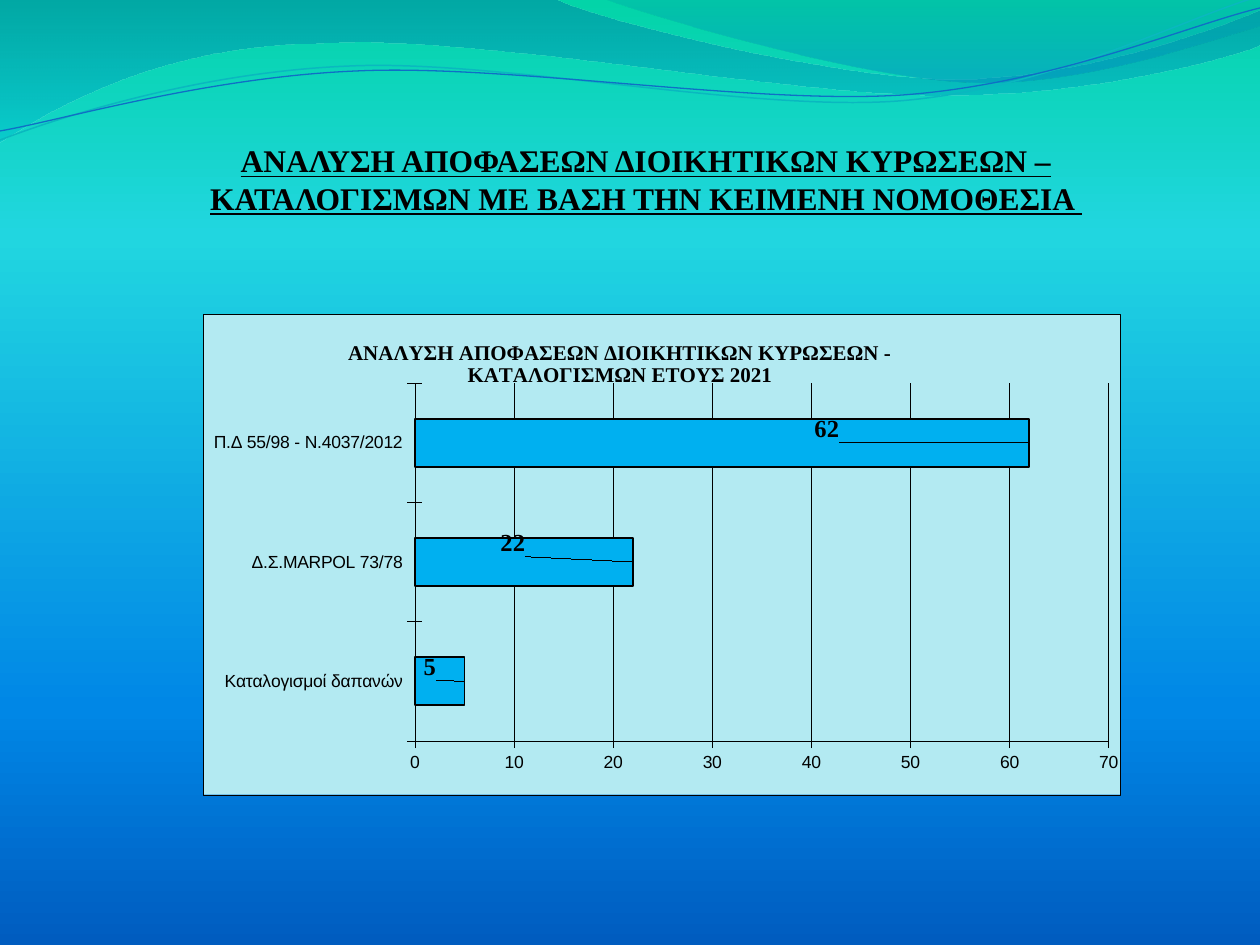
from lxml import etree
from pptx import Presentation
from pptx.chart.data import CategoryChartData
from pptx.dml.color import RGBColor
from pptx.enum.chart import XL_CHART_TYPE, XL_LABEL_POSITION, XL_TICK_LABEL_POSITION, XL_TICK_MARK
from pptx.enum.text import MSO_ANCHOR, PP_ALIGN
from pptx.oxml import parse_xml
from pptx.oxml.ns import nsdecls, qn
from pptx.util import Emu, Pt

BAR = XL_CHART_TYPE.BAR_CLUSTERED
OUTSIDE_END = XL_LABEL_POSITION.OUTSIDE_END
LOW = XL_TICK_LABEL_POSITION.LOW
CROSS = XL_TICK_MARK.CROSS
BOTTOM = MSO_ANCHOR.BOTTOM
CENTER = PP_ALIGN.CENTER

SCALE = 914400 / 126
SERIF, SANS = "Times New Roman", "Arial"
BLACK = "000000"


def px(length):
    return Emu(round(length * SCALE))


def color(hex_string):
    return RGBColor.from_string(hex_string)


def set_line(line, hex_string, points):
    line.color.rgb = color(hex_string)
    line.width = Pt(points)


def set_font(font, size, name, bold=False):
    font.size, font.name, font.bold = Pt(size), name, bold
    font.color.rgb = color(BLACK)


def set_gradient(fill, owner, stops):
    """Vertical gradient; each stop is (position %, colour, opacity %)."""
    fill.gradient()
    fill.gradient_angle = 270
    stop_list = next(owner.iter(qn("a:gsLst")))
    for stop in list(stop_list):
        stop_list.remove(stop)
    for position, hex_string, opacity in stops:
        stop = etree.SubElement(stop_list, qn("a:gs"), pos=str(position * 1000))
        tint = etree.SubElement(stop, qn("a:srgbClr"), val=hex_string)
        if opacity < 100:
            etree.SubElement(tint, qn("a:alpha"), val=str(opacity * 1000))


def manual_layout(x, y, w=None, h=None):
    """Chart layout in fractions: an offset, or a fixed inner area with w and h."""
    parts = []
    if w is not None:
        parts += [("layoutTarget", "inner"), ("xMode", "edge"), ("yMode", "edge")]
    parts += [("x", x), ("y", y)]
    if w is not None:
        parts += [("w", w), ("h", h)]
    inner = "".join(f'<c:{tag} val="{value}"/>' for tag, value in parts)
    return parse_xml(f'<c:layout {nsdecls("c")}><c:manualLayout>{inner}'
                     '</c:manualLayout></c:layout>')


def replace_layout(parent, layout, index):
    for old in parent.findall(qn("c:layout")):
        parent.remove(old)
    parent.insert(index, layout)


class Deck:
    def __init__(self, width, height):
        self.prs = Presentation()
        self.prs.slide_width, self.prs.slide_height = px(width), px(height)
        self.slide = self.prs.slides.add_slide(self.prs.slide_layouts[6])

    def background(self, stops):
        set_gradient(self.slide.background.fill, self.slide.element, stops)

    def wave(self, start, segments, stops=None, line=None):
        """Outline of segments: one point is a straight line, three a curve."""
        builder = self.slide.shapes.build_freeform(*start, scale=SCALE)
        points = [point for segment in segments for point in segment]
        builder.add_line_segments(points, close=stops is not None)
        shape = builder.convert_to_shape()
        shape.shadow.inherit = False
        steps = iter(list(shape.element.iter(qn("a:lnTo"))))
        for segment in segments:
            group = [next(steps) for _ in segment]
            if len(group) == 3:
                curve = etree.Element(qn("a:cubicBezTo"))
                group[0].addprevious(curve)
                for step in group:
                    curve.append(step[0])
                    step.getparent().remove(step)
        if stops:
            set_gradient(shape.fill, shape.element, stops)
            shape.line.fill.background()
        else:
            shape.fill.background()
            set_line(shape.line, *line)

    def heading(self, text, left, top, width, height):
        frame = self.slide.shapes.add_textbox(*map(px, (left, top, width, height))).text_frame
        frame.word_wrap = True
        frame.vertical_anchor = BOTTOM
        frame.margin_left = frame.margin_right = frame.margin_bottom = 0
        paragraph = frame.paragraphs[0]
        paragraph.alignment = CENTER
        run = paragraph.add_run()
        run.text = text
        set_font(run.font, 18, SERIF, True)
        run.font.underline = True

    def bar_chart(self, title, counts, label_offsets, left, top, width, height):
        data = CategoryChartData()
        data.categories = list(counts)
        data.add_series("Series 1", list(counts.values()))
        chart = self.slide.shapes.add_chart(
            BAR, *map(px, (left, top, width, height)), data).chart
        set_font(chart.font, 10, SANS)
        chart.has_legend = False

        # Panel and plot area
        space = chart.element
        space.find(qn("c:txPr")).addprevious(parse_xml(
            f'<c:spPr {nsdecls("c", "a")}><a:solidFill><a:srgbClr val="B3EAF2"/></a:solidFill>'
            f'<a:ln w="3175"><a:solidFill><a:srgbClr val="{BLACK}"/></a:solidFill></a:ln></c:spPr>'))
        replace_layout(next(space.iter(qn("c:plotArea"))),
                       manual_layout(0.231, 0.144, 0.757, 0.744), 0)

        # Chart title
        chart.has_title = True
        run = chart.chart_title.text_frame.paragraphs[0].add_run()
        run.text = title
        set_font(run.font, 12, SERIF, True)
        title_layout = manual_layout(0.154, 0.045)
        for tag in ("yMode", "xMode"):
            mode = etree.Element(qn(f"c:{tag}"), val="edge")
            title_layout[0].insert(0, mode)
        replace_layout(next(space.iter(qn("c:title"))), title_layout, 1)

        # Axes
        values = chart.value_axis
        for axis in (chart.category_axis, values):
            axis.major_tick_mark = CROSS
            set_font(axis.tick_labels.font, 10, SANS)
            set_line(axis.format.line, BLACK, 0.25)
        chart.category_axis.tick_label_position = LOW
        values.minimum_scale, values.maximum_scale, values.major_unit = 0, 70, 10
        set_line(values.major_gridlines.format.line, BLACK, 0.25)

        # Bars and their labels
        plot = chart.plots[0]
        plot.vary_by_categories = False
        plot.gap_width = 150
        bars = plot.series[0]
        bars.format.fill.solid()
        bars.format.fill.fore_color.rgb = color("00B0F0")
        set_line(bars.format.line, BLACK, 1)
        for index in range(len(counts)):
            label = bars.points[index].data_label
            set_font(label.font, 14, SERIF, True)
            label.position = OUTSIDE_END
        for element, offset in zip(space.iter(qn("c:dLbl")), label_offsets):
            replace_layout(element, manual_layout(*offset), 1)


def main():
    deck = Deck(1260, 945)
    deck.background([(0, "03D4A8", 100), (25, "21D6E0", 100),
                     (75, "0087E6", 100), (100, "005CBF", 100)])

    # Waves along the top
    deck.wave((0, -1), [
        [(554, -1)],
        [(600, 21), (837, 79), (955, 79)],
        [(1075, 79), (1207, 33), (1260, 11)],
        [(1261, 45)],
        [(1239, 55), (1096, 96), (940, 95)],
        [(784, 95), (481, 35), (324, 43)],
        [(163, 44), (58, 105), (-1, 142)],
    ], stops=[(0, "0074A1", 45), (100, "00C6CF", 55)])
    deck.wave((604, -1), [
        [(641, 14), (859, 78), (969, 82)],
        [(1079, 87), (1211, 40), (1260, 26)],
        [(1260, 0)],
    ], stops=[(0, "00A1A9", 30), (80, "008BBF", 45)])
    deck.wave((0, 140), [
        [(60, 117), (199, 72), (349, 66)],
        [(498, 59), (747, 112), (898, 101)],
        [(1050, 89), (1182, 19), (1257, -3)],
    ], line=("0AB8BF", 0.85))
    deck.wave((0, 131), [
        [(59, 121), (207, 77), (357, 71)],
        [(508, 64), (752, 105), (903, 95)],
        [(1053, 84), (1186, 26), (1260, 8)],
    ], line=("0F6FC6", 0.75))

    deck.heading("ΑΝΑΛΥΣΗ ΑΠΟΦΑΣΕΩΝ ΔΙΟΙΚΗΤΙΚΩΝ ΚΥΡΩΣΕΩΝ – ΚΑΤΑΛΟΓΙΣΜΩΝ "
                 "ΜΕ ΒΑΣΗ ΤΗΝ ΚΕΙΜΕΝΗ ΝΟΜΟΘΕΣΙΑ ", 115, 97, 1062, 120)
    deck.bar_chart(
        "ΑΝΑΛΥΣΗ ΑΠΟΦΑΣΕΩΝ ΔΙΟΙΚΗΤΙΚΩΝ ΚΥΡΩΣΕΩΝ - ΚΑΤΑΛΟΓΙΣΜΩΝ ΕΤΟΥΣ 2021",
        {"Καταλογισμοί δαπανών": 5, "Δ.Σ.MARPOL 73/78": 22, "Π.Δ 55/98 - N.4037/2012": 62},
        [(-0.05, -0.03), (-0.15, -0.04), (-0.24, -0.03)], 203, 314, 917, 481)
    deck.prs.save("out.pptx")


if __name__ == "__main__":
    main()
